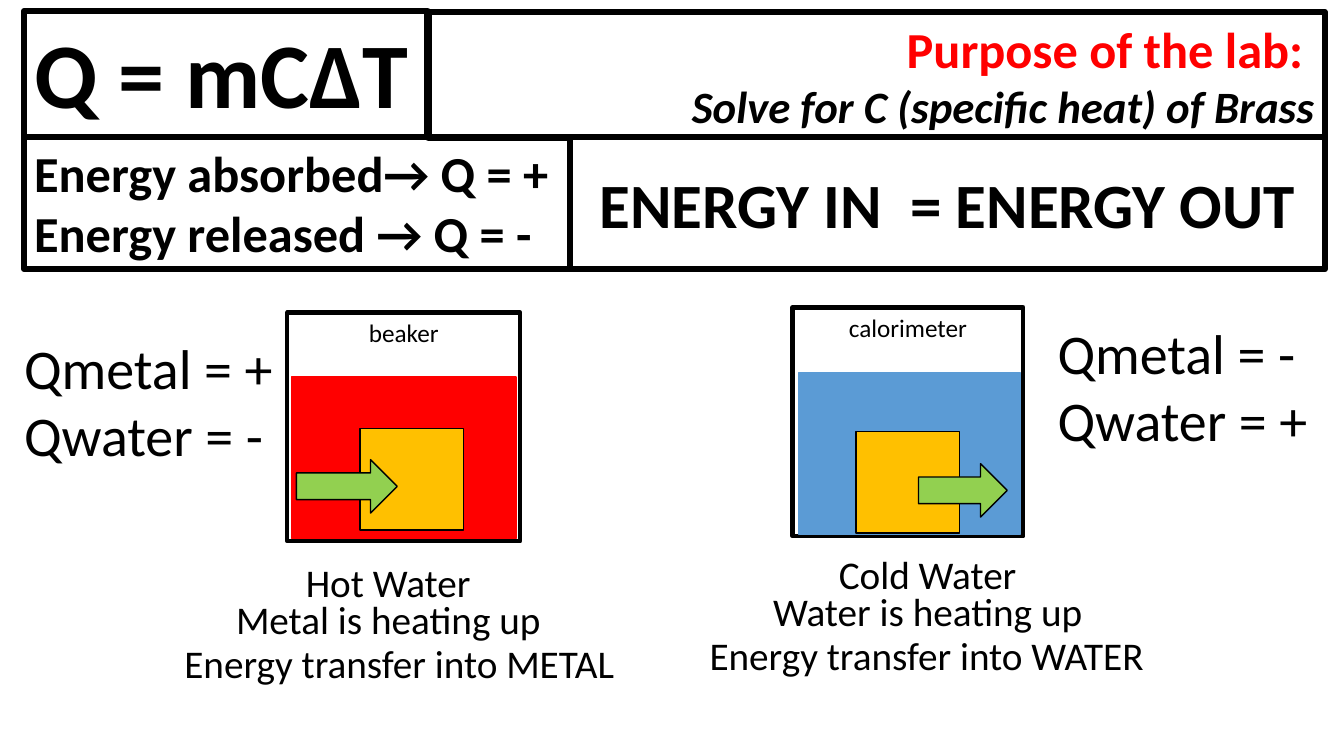
"""Build the specific heat lab slide."""
from pptx import Presentation
from pptx.dml.color import RGBColor
from pptx.enum.shapes import MSO_SHAPE as Preset
from pptx.enum.text import MSO_ANCHOR as Anchor, PP_ALIGN as Align
from pptx.util import Inches, Pt

THEME = {
    "font": "Calibri",
    "black": "000000", "white": "FFFFFF", "red": "FF0000",
    "blue": "5B9BD5", "metal": "FFC000", "arrow": "92D050",
    "formula": 66, "equation": 45, "sign": 40, "heading": 36,
    "goal": 32, "caption": 28, "label": 18,
    "frame_line": 4.5, "vessel_line": 3, "thin_line": 1,
}

PANELS = [
    {"box": (0.24, 0.11, 4, 1.25), "lines": ["Q = mCΔT"], "size": "formula"},
    {"box": (0.24, 1.36, 5.42, 1.31), "size": "heading",
     "lines": ["Energy absorbed→ Q = +", "Energy released → Q = -"]},
    {"box": (5.65, 1.36, 7.49, 1.31), "lines": ["ENERGY IN  = ENERGY OUT"],
     "size": "equation", "align": Align.CENTER, "anchor": Anchor.MIDDLE},
]
PURPOSE_BOX = (4.25, 0.12, 8.89, 1.25)
PURPOSE = ("Purpose of the lab: ", "Solve for C (specific heat) of Brass")

VESSELS = [
    {"label": "beaker", "box": (2.85, 3.1, 2.31, 2.27),
     "water": (2.89, 3.74, 2.23, 1.6), "water_color": "red",
     "metal": (3.57, 4.25), "arrow": (2.94, 4.56, 1, 0.53),
     "center": 3.85, "caption_top": 5.58, "transfer_center": 3.96,
     "captions": ["Hot Water", "Metal is heating up", "Energy transfer into METAL"],
     "signs_box": (0.14, 3.26, 3.31, 1.45), "signs": ["Qmetal = +", "Qwater = -"]},
    {"label": "calorimeter", "box": (7.86, 3.05, 2.29, 2.27),
     "water": (7.92, 3.7, 2.2, 1.6), "water_color": "blue",
     "metal": (8.49, 4.28), "arrow": (9.11, 4.6, 0.88, 0.53),
     "center": 9.2, "caption_top": 5.5, "transfer_center": 9.19,
     "captions": ["Cold Water", "Water is heating up", "Energy transfer into WATER"],
     "signs_box": (10.39, 3.11, 3.12, 1.45), "signs": ["Qmetal = -", "Qwater = +"]},
]
METAL_SIZE = (1.03, 1.01)
CAPTION_OFFSETS = (0, 0.37, 0.81)
CAPTION_WIDTH, TRANSFER_WIDTH, CAPTION_HEIGHT = 3.62, 4.63, 0.38


def color(name):
    return RGBColor.from_string(THEME[name])


def add_run(paragraph, text, size, ink="black", bold=False, italic=False):
    run = paragraph.add_run()
    run.text = text
    run.font.name = THEME["font"]
    run.font.size = Pt(THEME[size])
    run.font.color.rgb = color(ink)
    run.font.bold = bold
    run.font.italic = italic


def write(shape, lines, size, align=Align.LEFT, anchor=Anchor.TOP, bold=False):
    frame = shape.text_frame
    frame.word_wrap = True
    frame.vertical_anchor = anchor
    for index, line in enumerate(lines):
        paragraph = frame.add_paragraph() if index else frame.paragraphs[0]
        paragraph.alignment = align
        add_run(paragraph, line, size, bold=bold)


def add_block(slide, box, fill, line, width, preset=Preset.RECTANGLE):
    shape = slide.shapes.add_shape(preset, *map(Inches, box))
    shape.shadow.inherit = False
    if fill:
        shape.fill.solid()
        shape.fill.fore_color.rgb = color(fill)
    else:
        shape.fill.background()
    shape.line.color.rgb = color(line)
    shape.line.width = Pt(THEME[width])
    return shape


def add_text(slide, box, lines, size, **style):
    write(slide.shapes.add_textbox(*map(Inches, box)), lines, size, **style)


def add_panels(slide):
    for panel in PANELS:
        equation = panel["size"] == "equation"
        preset = Preset.FLOWCHART_PROCESS if equation else Preset.RECTANGLE
        fill = "white" if equation else None
        shape = add_block(slide, panel["box"], fill, "black", "frame_line", preset)
        write(shape, panel["lines"], panel["size"], panel.get("align", Align.LEFT),
              panel.get("anchor", Anchor.TOP), bold=True)


def add_purpose(slide):
    shape = add_block(slide, PURPOSE_BOX, None, "black", "frame_line")
    shape.text_frame.word_wrap = True
    shape.text_frame.vertical_anchor = Anchor.MIDDLE
    paragraph = shape.text_frame.paragraphs[0]
    paragraph.alignment = Align.RIGHT
    heading, goal = PURPOSE
    add_run(paragraph, heading, "heading", "red", bold=True)
    paragraph.add_line_break()
    add_run(paragraph, goal, "goal", bold=True, italic=True)


def add_vessel(slide, vessel):
    container = add_block(slide, vessel["box"], "white", "black", "vessel_line")
    write(container, [vessel["label"]], "label", Align.CENTER)
    water = vessel["water_color"]
    add_block(slide, vessel["water"], water, water, "thin_line")
    add_block(slide, vessel["metal"] + METAL_SIZE, "metal", "black", "thin_line")
    add_block(slide, vessel["arrow"], "arrow", "black", "thin_line", Preset.RIGHT_ARROW)
    centers = (vessel["center"], vessel["center"], vessel["transfer_center"])
    widths = (CAPTION_WIDTH, CAPTION_WIDTH, TRANSFER_WIDTH)
    for caption, center, width, offset in zip(
            vessel["captions"], centers, widths, CAPTION_OFFSETS):
        box = (center - width / 2, vessel["caption_top"] + offset, width, CAPTION_HEIGHT)
        add_text(slide, box, [caption], "caption", align=Align.CENTER, anchor=Anchor.MIDDLE)
    add_text(slide, vessel["signs_box"], vessel["signs"], "sign")


def main():
    presentation = Presentation()
    presentation.slide_width = Inches(13.33)
    presentation.slide_height = Inches(7.5)
    slide = presentation.slides.add_slide(presentation.slide_layouts[6])
    add_purpose(slide)
    add_panels(slide)
    for vessel in VESSELS:
        add_vessel(slide, vessel)
    presentation.save("out.pptx")


if __name__ == "__main__":
    main()
